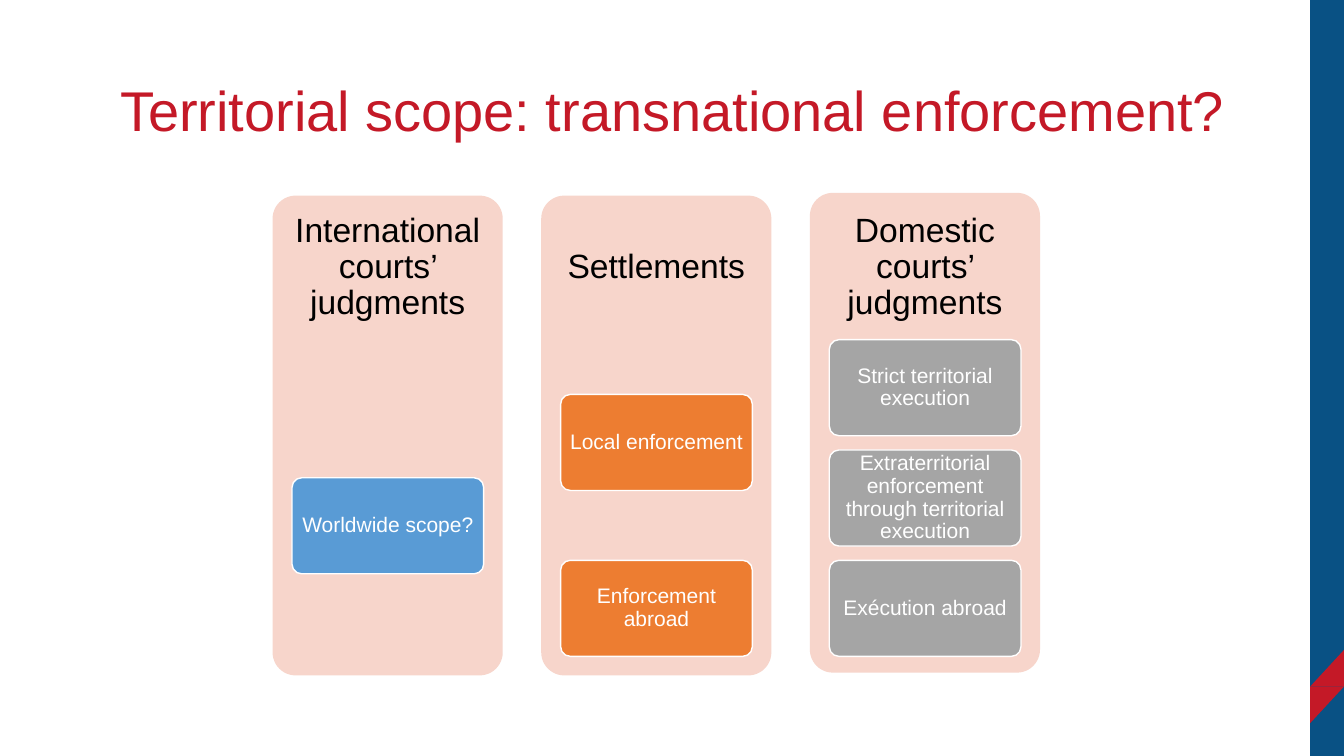
from pptx import Presentation
from pptx.dml.color import RGBColor
from pptx.enum.shapes import MSO_SHAPE
from pptx.enum.text import MSO_ANCHOR, PP_ALIGN
from pptx.util import Cm, Pt

RECTANGLE = MSO_SHAPE.RECTANGLE
ROUNDED = MSO_SHAPE.ROUNDED_RECTANGLE
TRIANGLE = MSO_SHAPE.RIGHT_TRIANGLE
MIDDLE = MSO_ANCHOR.MIDDLE
CENTER = PP_ALIGN.CENTER

RED, BLUE, PINK, WHITE = "C41927", "095184", "F7D5CB", "FFFFFF"

prs = Presentation()
prs.slide_width, prs.slide_height = Cm(33.87), Cm(19.05)
slide = prs.slides.add_slide(prs.slide_layouts[5])


def add_block(kind, left, top, width, height, fill, outline=None):
    block = slide.shapes.add_shape(kind, Cm(left), Cm(top), Cm(width), Cm(height))
    block.shadow.inherit = False
    block.fill.solid()
    block.fill.fore_color.rgb = RGBColor.from_string(fill)
    if outline:
        block.line.color.rgb = RGBColor.from_string(outline)
        block.line.width = Pt(1)
    else:
        block.line.fill.background()
    if kind == ROUNDED:
        block.adjustments[0] = 0.1
    return block


def write(holder, text, size, color, inset_x, inset_y):
    frame = holder.text_frame
    frame.word_wrap = True
    frame.vertical_anchor = MIDDLE
    frame.margin_left = frame.margin_right = Cm(inset_x)
    frame.margin_top = frame.margin_bottom = Cm(inset_y)
    paragraph = frame.paragraphs[0]
    paragraph.text = text
    paragraph.alignment = CENTER
    paragraph.line_spacing = 0.9
    paragraph.font.name = "Arial"
    paragraph.font.size = Pt(size)
    paragraph.font.color.rgb = RGBColor.from_string(color)


# Side stripe with its red slash
STRIPE_LEFT, STRIPE_WIDTH = 33.02, 0.85
add_block(RECTANGLE, STRIPE_LEFT, 0, STRIPE_WIDTH, 19.05, BLUE)
for slash_top, rotation in [(17.3, 180), (16.38, 0)]:
    slash_half = add_block(TRIANGLE, STRIPE_LEFT, slash_top, STRIPE_WIDTH, 0.92, RED)
    slash_half.rotation = rotation
    slash_half._element.spPr.xfrm.set("flipH", "1")

# Title
title = slide.shapes.title
title.left, title.top, title.width, title.height = Cm(2.33), Cm(1.01), Cm(29.21), Cm(3.68)
write(title, "Territorial scope: transnational enforcement?", 40, RED, 0.25, 0.13)

# Columns: heading, panel top, box colour, boxes with their tops
columns = [
    ("International courts’ judgments", 4.93, "599BD5", [("Worldwide scope?", 12.04)]),
    ("Settlements", 4.93, "ED7D31", [
        ("Local enforcement", 9.94),
        ("Enforcement abroad", 14.12),
    ]),
    ("Domestic courts’ judgments", 4.86, "A5A5A5", [
        ("Strict territorial execution", 8.56),
        ("Extraterritorial enforcement through territorial execution", 11.34),
        ("Exécution abroad", 14.12),
    ]),
]
FIRST_LEFT, COLUMN_STEP, PANEL_WIDTH = 6.87, 6.77, 5.8
HEADING_TOP = 4.93

for index, (heading, panel_top, box_color, boxes) in enumerate(columns):
    left = FIRST_LEFT + index * COLUMN_STEP
    add_block(ROUNDED, left, panel_top, PANEL_WIDTH, 12.09, PINK)
    heading_box = slide.shapes.add_textbox(
        Cm(left), Cm(HEADING_TOP), Cm(PANEL_WIDTH), Cm(3.63))
    write(heading_box, heading, 24, "000000", 0.48, 0.48)
    for label, box_top in boxes:
        box = add_block(ROUNDED, left + 0.49, box_top, 4.83, 2.42, box_color, WHITE)
        write(box, label, 15, WHITE, 0.03, 0.03)

prs.save("out.pptx")
